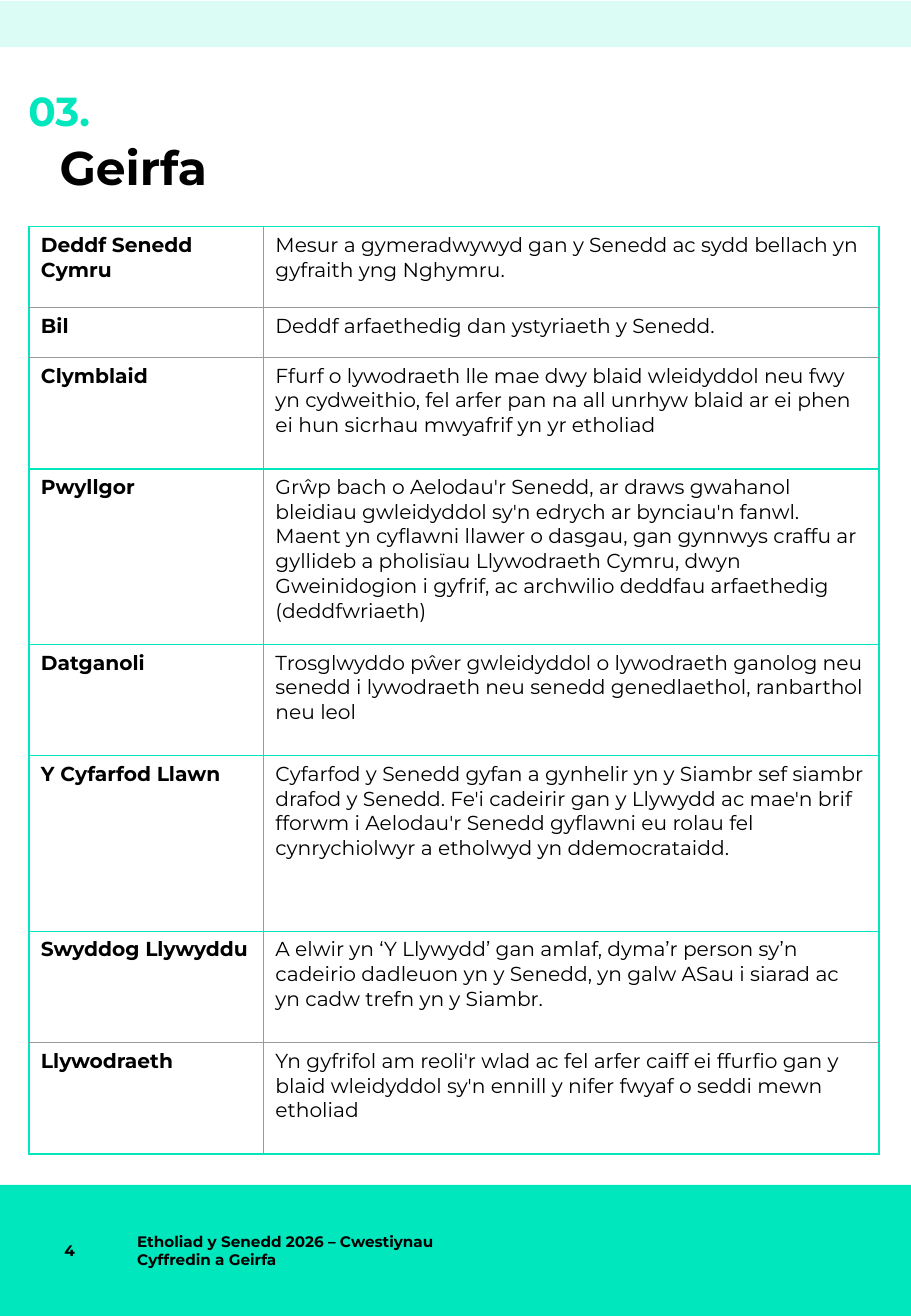
from dataclasses import dataclass

from lxml.etree import SubElement
from pptx import Presentation
from pptx.dml.color import RGBColor
from pptx.enum.shapes import MSO_SHAPE
from pptx.enum.text import MSO_ANCHOR, MSO_AUTO_SIZE, PP_ALIGN
from pptx.oxml.ns import qn
from pptx.slide import Slide
from pptx.table import _Cell
from pptx.text.text import TextFrame
from pptx.util import Pt

TEAL = RGBColor(0x00, 0xE7, 0xBD)
BORDER_TEAL = RGBColor(0x00, 0xE6, 0xBD)
RULE_GREY = RGBColor(0x9A, 0x9A, 0x9A)
BLACK = RGBColor(0x00, 0x00, 0x00)
FONT = "Montserrat"
PAGE_WIDTH, PAGE_HEIGHT = 540, 780.48
FOOTER_TOP, FOOTER_HEIGHT = 702.72, 77.76
TERM_WIDTH, MEANING_WIDTH = 139, 365


@dataclass(frozen=True)
class Band:
    top: float
    height: float
    opacity: int


@dataclass(frozen=True)
class Label:
    text: str
    left: float
    top: float
    width: float
    height: float
    size: float
    color: RGBColor
    inset: tuple[float, float]
    anchor: MSO_ANCHOR


@dataclass(frozen=True)
class Entry:
    term: str
    meaning: str
    height: float
    rule_below: RGBColor


BANDS = [Band(FOOTER_TOP, FOOTER_HEIGHT, 100), Band(0.5, 27.5, 14)]

LABELS = [
    Label("03.", 16.8, 51.1, 465, 26.6, 24, TEAL, (0, 0), MSO_ANCHOR.TOP),
    Label("Etholiad y Senedd 2026 – Cwestiynau Cyffredin a Geirfa", 74.2, FOOTER_TOP,
          226, FOOTER_HEIGHT, 9, BLACK, (7.2, 3.6), MSO_ANCHOR.MIDDLE),
    Label("4", 31, FOOTER_TOP, 44.6, FOOTER_HEIGHT, 9, BLACK, (7.2, 3.6), MSO_ANCHOR.MIDDLE),
]

ENTRIES = [
    Entry("Deddf Senedd Cymru",
          "Mesur a gymeradwywyd gan y Senedd ac sydd bellach yn gyfraith yng Nghymru.",
          48, RULE_GREY),
    Entry("Bil", "Deddf arfaethedig dan ystyriaeth y Senedd.", 29.6, RULE_GREY),
    Entry("Clymblaid",
          "Ffurf o lywodraeth lle mae dwy blaid wleidyddol neu fwy yn cydweithio, fel arfer "
          "pan na all unrhyw blaid ar ei phen ei hun sicrhau mwyafrif yn yr etholiad",
          66.1, BORDER_TEAL),
    Entry("Pwyllgor",
          "Grŵp bach o Aelodau'r Senedd, ar draws gwahanol bleidiau gwleidyddol sy'n edrych "
          "ar bynciau'n fanwl. Maent yn cyflawni llawer o dasgau, gan gynnwys craffu ar "
          "gyllideb a pholisïau Llywodraeth Cymru, dwyn Gweinidogion i gyfrif, ac archwilio "
          "deddfau arfaethedig (deddfwriaeth)",
          104.1, BORDER_TEAL),
    Entry("Datganoli",
          "Trosglwyddo pŵer gwleidyddol o lywodraeth ganolog neu senedd i lywodraeth neu "
          "senedd genedlaethol, ranbarthol neu leol",
          66.1, BORDER_TEAL),
    Entry("Y Cyfarfod Llawn",
          "Cyfarfod y Senedd gyfan a gynhelir yn y Siambr sef siambr drafod y Senedd. Fe'i "
          "cadeirir gan y Llywydd ac mae'n brif fforwm i Aelodau'r Senedd gyflawni eu rolau "
          "fel cynrychiolwyr a etholwyd yn ddemocrataidd.",
          104.1, BORDER_TEAL),
    Entry("Swyddog Llywyddu",
          "A elwir yn ‘Y Llywydd’ gan amlaf, dyma’r person sy’n cadeirio dadleuon yn y "
          "Senedd, yn galw ASau i siarad ac yn cadw trefn yn y Siambr.",
          66.1, RULE_GREY),
    Entry("Llywodraeth",
          "Yn gyfrifol am reoli'r wlad ac fel arfer caiff ei ffurfio gan y blaid wleidyddol "
          "sy'n ennill y nifer fwyaf o seddi mewn etholiad",
          66.1, BORDER_TEAL),
]


def write(frame: TextFrame, text: str, size: float, color: RGBColor, bold: bool) -> None:
    paragraph = frame.paragraphs[0]
    paragraph.alignment = PP_ALIGN.LEFT
    run = paragraph.add_run()
    run.text = text
    run.font.name = FONT
    run.font.size = Pt(size)
    run.font.bold = bold
    run.font.color.rgb = color


def set_frame(frame: TextFrame, inset: tuple[float, float], anchor: MSO_ANCHOR) -> None:
    frame.word_wrap = True
    frame.auto_size = MSO_AUTO_SIZE.NONE
    frame.vertical_anchor = anchor
    frame.margin_left = frame.margin_right = Pt(inset[0])
    frame.margin_top = frame.margin_bottom = Pt(inset[1])


def add_band(slide: Slide, band: Band) -> None:
    stripe = slide.shapes.add_shape(
        MSO_SHAPE.RECTANGLE, 0, Pt(band.top), Pt(PAGE_WIDTH), Pt(band.height))
    stripe.shadow.inherit = False
    stripe.line.fill.background()
    stripe.fill.solid()
    stripe.fill.fore_color.rgb = TEAL
    if band.opacity < 100:
        tint = stripe._element.spPr.find(qn("a:solidFill")).find(qn("a:srgbClr"))
        SubElement(tint, qn("a:alpha"), val=str(band.opacity * 1000))


def add_title(slide: Slide) -> None:
    title = slide.shapes.title
    title.left, title.top, title.width, title.height = Pt(35.3), Pt(85.7), Pt(491), Pt(64.8)
    set_frame(title.text_frame, (0, 0), MSO_ANCHOR.TOP)
    title.text_frame.paragraphs[0].line_spacing = 0.9
    write(title.text_frame, "Geirfa", 28, BLACK, True)


def add_label(slide: Slide, label: Label) -> None:
    box = slide.shapes.add_textbox(
        Pt(label.left), Pt(label.top), Pt(label.width), Pt(label.height))
    set_frame(box.text_frame, label.inset, label.anchor)
    write(box.text_frame, label.text, label.size, label.color, True)


def set_borders(cell: _Cell, colors: dict[str, RGBColor]) -> None:
    properties = cell._tc.get_or_add_tcPr()
    for side in ("lnL", "lnR", "lnT", "lnB"):
        color = colors[side]
        width = Pt(1) if color == BORDER_TEAL else Pt(0.5)
        line = SubElement(properties, qn(f"a:{side}"), w=str(width))
        SubElement(SubElement(line, qn("a:solidFill")), qn("a:srgbClr"), val=str(color))


def add_glossary(slide: Slide) -> None:
    glossary = slide.shapes.add_table(
        len(ENTRIES), 2, Pt(17.1), Pt(134.4), Pt(TERM_WIDTH + MEANING_WIDTH),
        Pt(sum(entry.height for entry in ENTRIES))).table
    glossary.first_row = False
    glossary.horz_banding = False
    glossary.columns[0].width = Pt(TERM_WIDTH)
    glossary.columns[1].width = Pt(MEANING_WIDTH)
    rule_above = BORDER_TEAL
    for row, entry in enumerate(ENTRIES):
        glossary.rows[row].height = Pt(entry.height)
        for column, text in enumerate((entry.term, entry.meaning)):
            is_term = column == 0
            cell = glossary.cell(row, column)
            write(cell.text_frame, text, 12, BLACK, is_term)
            set_borders(cell, {
                "lnL": BORDER_TEAL if is_term else RULE_GREY,
                "lnR": RULE_GREY if is_term else BORDER_TEAL,
                "lnT": rule_above,
                "lnB": entry.rule_below,
            })
            cell.fill.background()
        rule_above = entry.rule_below


def main() -> None:
    presentation = Presentation()
    presentation.slide_width = Pt(PAGE_WIDTH)
    presentation.slide_height = Pt(PAGE_HEIGHT)
    slide = presentation.slides.add_slide(presentation.slide_layouts[5])
    for band in BANDS:
        add_band(slide, band)
    add_title(slide)
    for label in LABELS:
        add_label(slide, label)
    add_glossary(slide)
    presentation.save("out.pptx")


if __name__ == "__main__":
    main()
